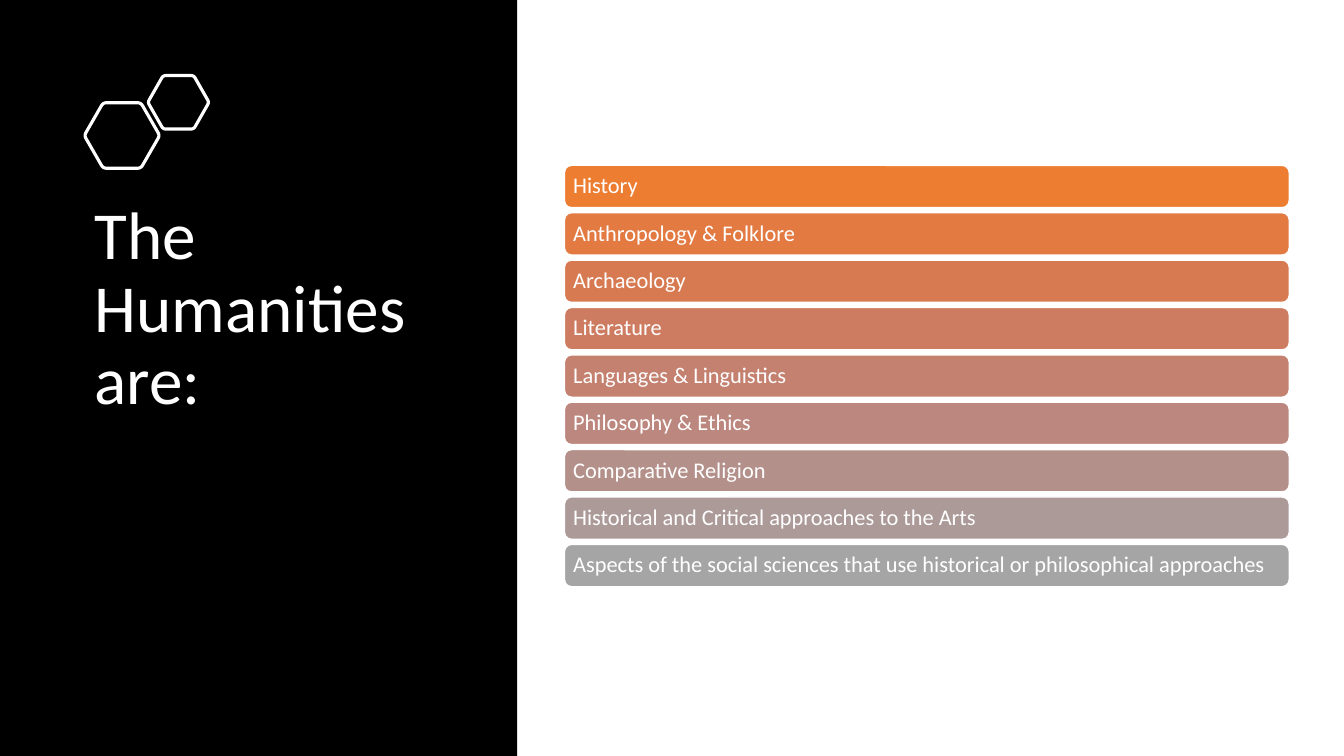
from pptx import Presentation
from pptx.dml.color import RGBColor
from pptx.enum.shapes import MSO_SHAPE as Preset
from pptx.enum.text import MSO_ANCHOR as Anchor, MSO_AUTO_SIZE as AutoSize, PP_ALIGN as Align
from pptx.util import Pt

FONT = "Calibri"
WHITE = "FFFFFF"
FIELDS = [
    ("History", "ED7D31"),
    ("Anthropology & Folklore", "E27A42"),
    ("Archaeology", "D87A51"),
    ("Literature", "CE7C61"),
    ("Languages & Linguistics", "C48170"),
    ("Philosophy & Ethics", "BC877E"),
    ("Comparative Religion", "B4908B"),
    ("Historical and Critical approaches to the Arts", "AC9A99"),
    ("Aspects of the social sciences that use historical or philosophical approaches", "A5A5A5"),
]


def paint(color_format, hex_color):
    color_format.rgb = RGBColor.from_string(hex_color)


def style_shape(shape, fill=None, line=None, weight=1):
    shape.shadow.inherit = False
    if fill:
        shape.fill.solid()
        paint(shape.fill.fore_color, fill)
    else:
        shape.fill.background()
    if line:
        paint(shape.line.color, line)
        shape.line.width = Pt(weight)
    else:
        shape.line.fill.background()


def write_text(shape, text, size, anchor):
    frame = shape.text_frame
    frame.text = text
    frame.word_wrap = True
    frame.auto_size = AutoSize.NONE
    frame.vertical_anchor = anchor
    para = frame.paragraphs[0]
    para.alignment = Align.LEFT
    para.line_spacing = 0.9
    font = para.runs[0].font
    font.name, font.size = FONT, Pt(size)
    paint(font.color, WHITE)


def rounded_outline(corners, cut=0.09, steps=6):
    """Return the points of a polygon whose corners are rounded by quadratic curves."""
    points = []
    for index, corner in enumerate(corners):
        before, after = corners[index - 1], corners[(index + 1) % len(corners)]
        start, end = ([c + cut * (n - c) for c, n in zip(corner, near)] for near in (before, after))
        for step in range(steps + 1):
            t = step / steps
            points.append(tuple(
                Pt((1 - t) ** 2 * s + 2 * t * (1 - t) * c + t * t * e)
                for s, c, e in zip(start, corner, end)
            ))
    return points


def add_hexagon(slide, left, top, width, height):
    right, bottom, middle = left + width, top + height, top + height / 2
    inset = width / 4
    corners = [
        (left, middle), (left + inset, top), (right - inset, top),
        (right, middle), (right - inset, bottom), (left + inset, bottom),
    ]
    first, *others = rounded_outline(corners)
    builder = slide.shapes.build_freeform(*first)
    builder.add_line_segments(others, close=True)
    style_shape(builder.convert_to_shape(), line=WHITE, weight=2.25)


def add_title_panel(slide, left, top, width, height):
    panel = slide.shapes.add_shape(Preset.RECTANGLE, Pt(left), Pt(top), Pt(width), Pt(height))
    style_shape(panel, fill="000000")
    title = slide.shapes.title
    title.element.addprevious(panel.element)
    title.left, title.top = Pt(left + 60.5), Pt(top + 140.4)
    title.width, title.height = Pt(282.2), Pt(252)
    write_text(title, "The Humanities are:", 48, Anchor.TOP)
    add_hexagon(slide, left + 60.2, top + 73.4, 53.9, 46.8)
    add_hexagon(slide, left + 105.6, top + 54, 43.7, 38.2)


def add_field_bars(slide, left, top, width, height):
    bar_height = 30.24
    pitch = (height - bar_height) / (len(FIELDS) - 1)
    for row, (name, color) in enumerate(FIELDS):
        bar = slide.shapes.add_shape(
            Preset.ROUNDED_RECTANGLE, Pt(left), Pt(top + row * pitch), Pt(width), Pt(bar_height))
        style_shape(bar, fill=color, line=WHITE)
        write_text(bar, name, 16, Anchor.MIDDLE)
        frame = bar.text_frame
        frame.margin_left = frame.margin_right = Pt(4.8)
        frame.margin_top = frame.margin_bottom = Pt(4.8)


def main():
    deck = Presentation()
    deck.slide_width, deck.slide_height = Pt(960), Pt(540)
    slide = deck.slides.add_slide(deck.slide_layouts[5])
    add_title_panel(slide, 0, 0, 369.4, 540)
    add_field_bars(slide, 403.2, 118.1, 517.7, 300.96)
    deck.save("out.pptx")


if __name__ == "__main__":
    main()
